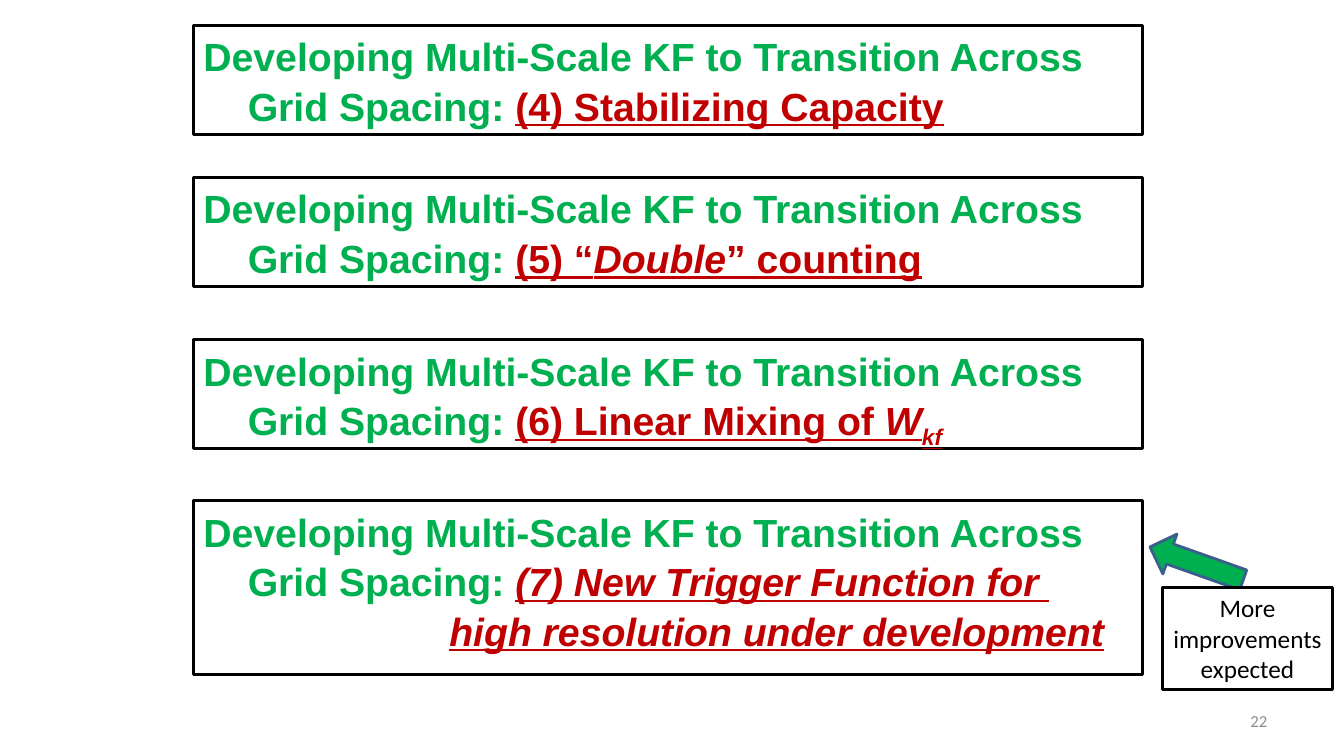
from pptx import Presentation
from pptx.dml.color import RGBColor
from pptx.enum.shapes import MSO_SHAPE
from pptx.enum.text import MSO_ANCHOR, MSO_AUTO_SIZE, PP_ALIGN
from pptx.util import Pt

WHITE = RGBColor(0xFF, 0xFF, 0xFF)
BLACK = RGBColor(0x00, 0x00, 0x00)
GREEN = RGBColor(0x00, 0xB0, 0x50)
RED = RGBColor(0xC0, 0x00, 0x00)
ARROW_EDGE = RGBColor(0x3A, 0x5F, 0x8C)
GREY = RGBColor(0x8C, 0x8C, 0x8C)

LEAD = "Developing Multi-Scale KF to Transition Across Grid Spacing: "
HANG = 31.7
TOPICS = [
    (18, 78, [("(4) Stabilizing Capacity", "")], ""),
    (126.7, 78, [("(5) “", ""), ("Double", "i"), ("” counting", "")], ""),
    (242.6, 78, [("(6) Linear Mixing of ", ""), ("W", "i"), ("kf", "i sub")], ""),
    (357.8, 124, [("(7) New Trigger Function for ", "i")],
     "high resolution under development"),
]


def add_outlined(slide, kind, box, fill, edge):
    """Add a filled, outlined preset shape in the given box of points."""
    shape = slide.shapes.add_shape(kind, *(Pt(length) for length in box))
    shape.shadow.inherit = False
    shape.fill.solid()
    shape.fill.fore_color.rgb = fill
    shape.line.color.rgb = edge
    shape.line.width = Pt(2)
    return shape


def style_line(paragraph, indent, hang):
    """Give a topic line its bold font, spacing and left indent."""
    paragraph.alignment = PP_ALIGN.LEFT
    paragraph.line_spacing = 1.05
    paragraph.font.name = "Arial"
    paragraph.font.size = Pt(28)
    paragraph.font.bold = True
    properties = paragraph._p.get_or_add_pPr()
    properties.set("marL", str(Pt(indent)))
    properties.set("indent", str(Pt(-hang)))


def add_phrase(paragraph, words, style):
    """Append underlined red words, italic or subscript as the style says."""
    phrase = paragraph.add_run()
    phrase.text = words
    phrase.font.color.rgb = RED
    phrase.font.underline = True
    phrase.font.italic = "i" in style
    if "sub" in style:
        phrase.font._element.set("baseline", "-25000")


def add_topic(slide, box, phrases, continuation):
    """Add one framed topic with its green lead and red subject."""
    frame = add_outlined(slide, MSO_SHAPE.RECTANGLE, box, WHITE, BLACK).text_frame
    frame.word_wrap = True
    frame.vertical_anchor = MSO_ANCHOR.TOP
    heading = frame.paragraphs[0]
    style_line(heading, HANG, HANG)
    lead = heading.add_run()
    lead.text = LEAD
    lead.font.color.rgb = GREEN
    for words, style in phrases:
        add_phrase(heading, words, style)
    if continuation:
        second = frame.add_paragraph()
        style_line(second, HANG + 144, 0)
        add_phrase(second, continuation, "i")


def add_outlook(slide, left, top):
    """Add the arrow and the note about future improvements."""
    arrow = add_outlined(slide, MSO_SHAPE.LEFT_ARROW, (left, top, 70.6, 30.2),
                         GREEN, ARROW_EDGE)
    arrow.rotation = 19.5
    note = add_outlined(slide, MSO_SHAPE.RECTANGLE,
                        (left + 10.8, top + 32.4, 121.7, 72.7), WHITE, BLACK)
    frame = note.text_frame
    frame.word_wrap = True
    frame.auto_size = MSO_AUTO_SIZE.SHAPE_TO_FIT_TEXT
    frame.vertical_anchor = MSO_ANCHOR.TOP
    message = frame.paragraphs[0]
    message.text = "More improvements expected"
    message.alignment = PP_ALIGN.CENTER
    message.font.name = "Calibri"
    message.font.size = Pt(18)
    message.font.color.rgb = BLACK


def add_page_number(slide, box):
    """Add the grey page number, right-aligned in its box."""
    frame = slide.shapes.add_textbox(*(Pt(length) for length in box)).text_frame
    frame.word_wrap = True
    frame.vertical_anchor = MSO_ANCHOR.MIDDLE
    number = frame.paragraphs[0]
    number.text = "22"
    number.alignment = PP_ALIGN.RIGHT
    number.font.name = "Calibri"
    number.font.size = Pt(12)
    number.font.color.rgb = GREY


def main():
    """Build the slide and save it."""
    presentation = Presentation()
    presentation.slide_width = Pt(960)
    presentation.slide_height = Pt(540)
    slide = presentation.slides.add_slide(presentation.slide_layouts[6])
    for top, height, phrases, continuation in TOPICS:
        add_topic(slide, (138.2, top, 678.2, height), phrases, continuation)
    add_outlook(slide, 819.4, 387.4)
    add_page_number(slide, (688.3, 500.4, 224, 28.8))
    presentation.save("out.pptx")


if __name__ == "__main__":
    main()
